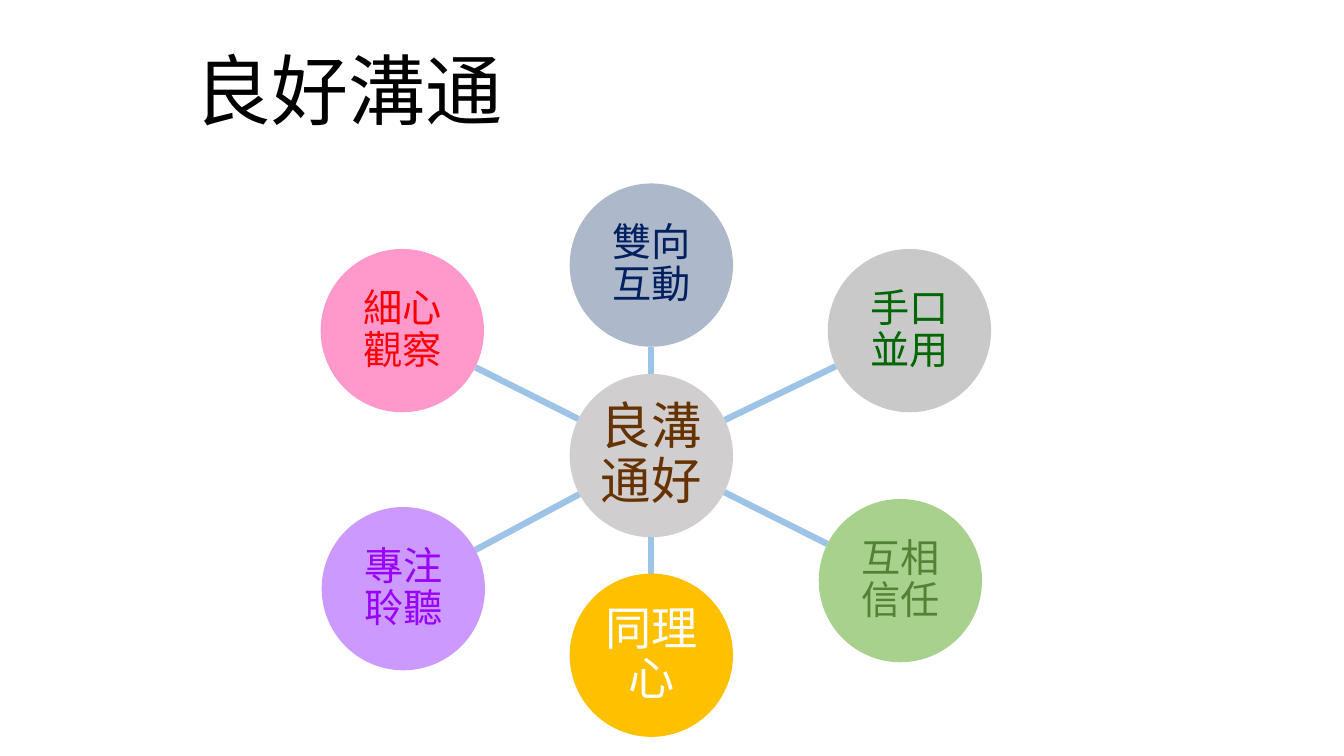
"""Build the good-communication hub slide."""
from math import hypot

from lxml.etree import SubElement
from pptx import Presentation
from pptx.dml.color import RGBColor
from pptx.enum.shapes import MSO_CONNECTOR, MSO_SHAPE
from pptx.enum.text import MSO_ANCHOR, PP_ALIGN
from pptx.oxml.ns import qn
from pptx.util import Inches, Pt

FONT = "Noto Sans CJK JP"
BLACK = RGBColor(0x00, 0x00, 0x00)
WHITE = RGBColor(0xFF, 0xFF, 0xFF)
SPOKE_BLUE = RGBColor(0x9D, 0xC3, 0xE6)
HUB_GREY = RGBColor(0xD0, 0xCE, 0xCE)
BROWN = RGBColor(0x66, 0x33, 0x00)
SLATE = RGBColor(0xAD, 0xB9, 0xCA)
NAVY = RGBColor(0x00, 0x20, 0x60)
SILVER = RGBColor(0xC9, 0xC9, 0xC9)
GREEN = RGBColor(0x00, 0x66, 0x00)
LIGHT_GREEN = RGBColor(0xA9, 0xD1, 0x8E)
OLIVE = RGBColor(0x54, 0x82, 0x35)
GOLD = RGBColor(0xFF, 0xC0, 0x00)
LILAC = RGBColor(0xCC, 0x99, 0xFF)
PURPLE = RGBColor(0x99, 0x00, 0xFF)
PINK = RGBColor(0xFF, 0x99, 0xCC)
RED = RGBColor(0xFF, 0x00, 0x00)

CELL = Inches(0.1)
RADIUS = 8.1
HUB = (64.6, 45.2)
SKILLS = [
    ("雙向互動", (64.6, 26.3), SLATE, NAVY, 28),
    ("手口並用", (90.2, 32.8), SILVER, GREEN, 28),
    ("互相信任", (89.3, 57.6), LIGHT_GREEN, OLIVE, 28),
    ("同理心", (64.6, 65), GOLD, WHITE, 33),
    ("專注聆聽", (40, 58.4), LILAC, PURPLE, 28),
    ("細心觀察", (39.9, 32.8), PINK, RED, 28),
]


def cells(*counts):
    """Turn counts of grid cells into lengths."""
    return [round(count * CELL) for count in counts]


def write(frame, wording, size, color, align, inset):
    """Fill a text frame with one formatted, vertically centred paragraph."""
    frame.text = wording
    frame.word_wrap = True
    frame.vertical_anchor = MSO_ANCHOR.MIDDLE
    frame.margin_left = frame.margin_right = Inches(inset)
    frame.margin_top = frame.margin_bottom = Inches(inset / 2)
    paragraph = frame.paragraphs[0]
    paragraph.alignment = align
    paragraph.line_spacing = 0.9
    font = paragraph.runs[0].font
    font.name = FONT
    font.size = Pt(size)
    font.color.rgb = color
    SubElement(font._element, qn("a:ea"), typeface=FONT)


def add_title(slide, wording):
    """Add the slide heading."""
    heading = slide.shapes.add_textbox(*cells(18.3, 4.2, 77.5, 10.3))
    write(heading.text_frame, wording, 55, BLACK, PP_ALIGN.LEFT, 0.1)


def add_circle(slide, wording, center, fill, color, size):
    """Add a labelled circle around a grid point."""
    x, y = center
    circle = slide.shapes.add_shape(
        MSO_SHAPE.OVAL, *cells(x - RADIUS, y - RADIUS, 2 * RADIUS, 2 * RADIUS))
    circle.shadow.inherit = False
    circle.fill.solid()
    circle.fill.fore_color.rgb = fill
    circle.line.fill.background()
    write(circle.text_frame, wording, size, color, PP_ALIGN.CENTER, 0.02)


def add_spoke(slide, center):
    """Join the rim of the hub to the rim of an outer circle."""
    dx, dy = center[0] - HUB[0], center[1] - HUB[1]
    share = RADIUS / hypot(dx, dy)
    rim_x, rim_y = dx * share, dy * share
    spoke = slide.shapes.add_connector(
        MSO_CONNECTOR.STRAIGHT,
        *cells(HUB[0] + rim_x, HUB[1] + rim_y, center[0] - rim_x, center[1] - rim_y))
    spoke.line.color.rgb = SPOKE_BLUE
    spoke.line.width = Pt(4.5)
    SubElement(spoke._element.spPr, qn("a:effectLst"))


def main():
    """Lay out the title, the hub and its six skills."""
    deck = Presentation()
    deck.slide_width, deck.slide_height = Inches(13.33), Inches(7.5)
    slide = deck.slides.add_slide(deck.slide_layouts[6])
    add_title(slide, "良好溝通")
    add_circle(slide, "良溝通好", HUB, HUB_GREY, BROWN, 36)
    for wording, center, fill, color, size in SKILLS:
        add_spoke(slide, center)
        add_circle(slide, wording, center, fill, color, size)
    deck.save("out.pptx")


if __name__ == "__main__":
    main()
